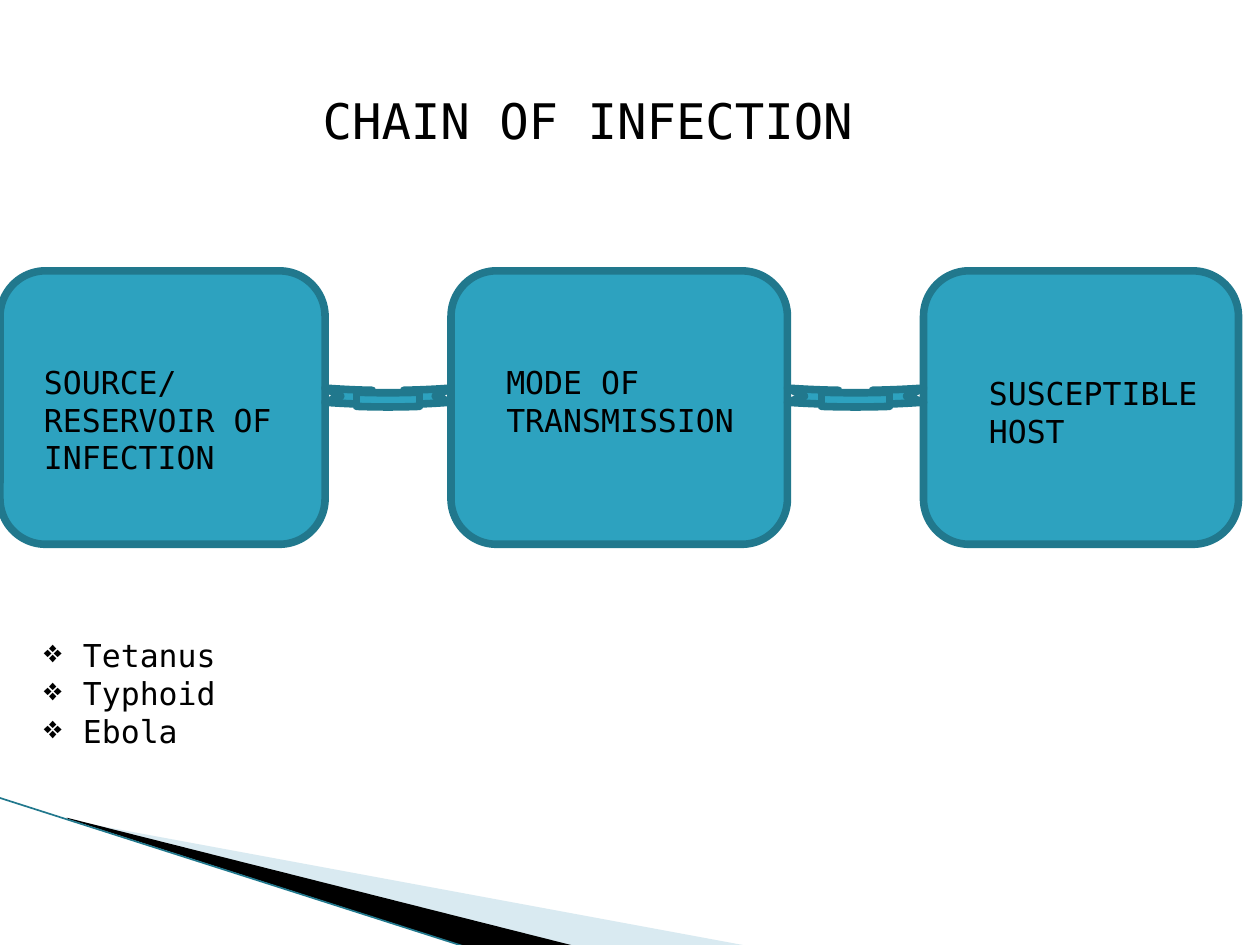
from dataclasses import dataclass

from lxml.etree import SubElement
from pptx import Presentation
from pptx.dml.color import RGBColor
from pptx.enum.shapes import MSO_CONNECTOR, MSO_SHAPE
from pptx.enum.text import MSO_AUTO_SIZE, PP_ALIGN
from pptx.oxml.ns import qn
from pptx.util import Inches, Pt


@dataclass(frozen=True)
class Theme:
    fill: RGBColor = RGBColor(0x2D, 0xA2, 0xBF)
    outline: RGBColor = RGBColor(0x21, 0x78, 0x8D)
    pale: RGBColor = RGBColor(0xA0, 0xCB, 0xDC)
    black: RGBColor = RGBColor(0, 0, 0)
    font: str = "DejaVu Sans Mono"
    title_size: Pt = Pt(28)
    body_size: Pt = Pt(18)
    outline_width: Pt = Pt(4.33)


theme = Theme()
deck = Presentation()
deck.slide_width, deck.slide_height = Inches(10), Inches(7.5)
page = deck.slides.add_slide(deck.slide_layouts[6])


def add_link(kind, left, top, width, height):
    shape = page.shapes.add_shape(kind, Inches(left), Inches(top), Inches(width), Inches(height))
    shape.shadow.inherit = False
    shape.fill.solid()
    shape.fill.fore_color.rgb = theme.fill
    shape.line.color.rgb = theme.outline
    shape.line.width = theme.outline_width


def add_text(lines, left, top, width, height, size=theme.body_size, align=PP_ALIGN.LEFT, bullet=None):
    box = page.shapes.add_textbox(Inches(left), Inches(top), Inches(width), Inches(height))
    frame = box.text_frame
    frame.word_wrap = True
    frame.auto_size = MSO_AUTO_SIZE.SHAPE_TO_FIT_TEXT
    frame.text = "\n".join(lines)
    for para in frame.paragraphs:
        para.alignment = align
        if bullet:
            properties = para._p.get_or_add_pPr()
            properties.set("marL", str(Inches(0.31)))
            properties.set("indent", str(-Inches(0.31)))
            SubElement(properties, qn("a:buChar")).set("char", bullet)
        for span in para.runs:
            span.font.name = theme.font
            span.font.size = size
            span.font.color.rgb = theme.black


# Corner wedges: points, colour, opacity in percent
wedges = [
    ([(0.55, 6.51), (5.95, 7.51), (4.56, 7.51), (0.55, 6.5)], theme.pale, 40),
    ([(0.53, 6.49), (4.57, 7.51), (3.72, 7.52), (0.54, 6.5)], theme.black, 100),
]
for points, color, opacity in wedges:
    corners = [(Inches(x), Inches(y)) for x, y in points]
    builder = page.shapes.build_freeform(*corners[0])
    builder.add_line_segments(corners[1:], close=True)
    wedge = builder.convert_to_shape()
    wedge.shadow.inherit = False
    wedge.fill.solid()
    wedge.fill.fore_color.rgb = color
    wedge.line.fill.background()
    if opacity < 100:
        color_node = wedge._element.spPr.find(".//" + qn("a:srgbClr"))
        SubElement(color_node, qn("a:alpha")).set("val", str(opacity * 1000))

# Corner edge line
edge = page.shapes.add_connector(
    MSO_CONNECTOR.STRAIGHT, Inches(-0.01), Inches(6.33), Inches(3.71), Inches(7.52))
edge.line.color.rgb = theme.outline
edge.line.width = Pt(0.95)
SubElement(edge._element.spPr, qn("a:effectLst"))

# Chain boxes, then the ribbons that fill the gaps between them
boxes = [(0, 2.58), (3.58, 2.67), (7.33, 2.5)]
for left, width in boxes:
    add_link(MSO_SHAPE.ROUNDED_RECTANGLE, left, 2.15, width, 2.17)
for (left, width), (next_left, _) in zip(boxes, boxes[1:]):
    right = left + width
    add_link(MSO_SHAPE.CURVED_DOWN_RIBBON, right, 3.08, next_left - right, 0.15)

# Box labels
add_text(["SOURCE/", "RESERVOIR OF INFECTION"], 0.25, 2.83, 2.08, 1.01)
add_text(["MODE OF TRANSMISSION"], 3.92, 2.83, 2.13, 0.71)
add_text(["SUSCEPTIBLE HOST"], 7.75, 2.92, 2, 0.71)

# Title and examples
add_text(["CHAIN OF INFECTION"], 0.75, 0.67, 7.83, 0.57, theme.title_size, PP_ALIGN.CENTER)
add_text(["Tetanus", "Typhoid", "Ebola"], 0.25, 5, 3.67, 1.01, bullet="❖")

deck.save("out.pptx")
